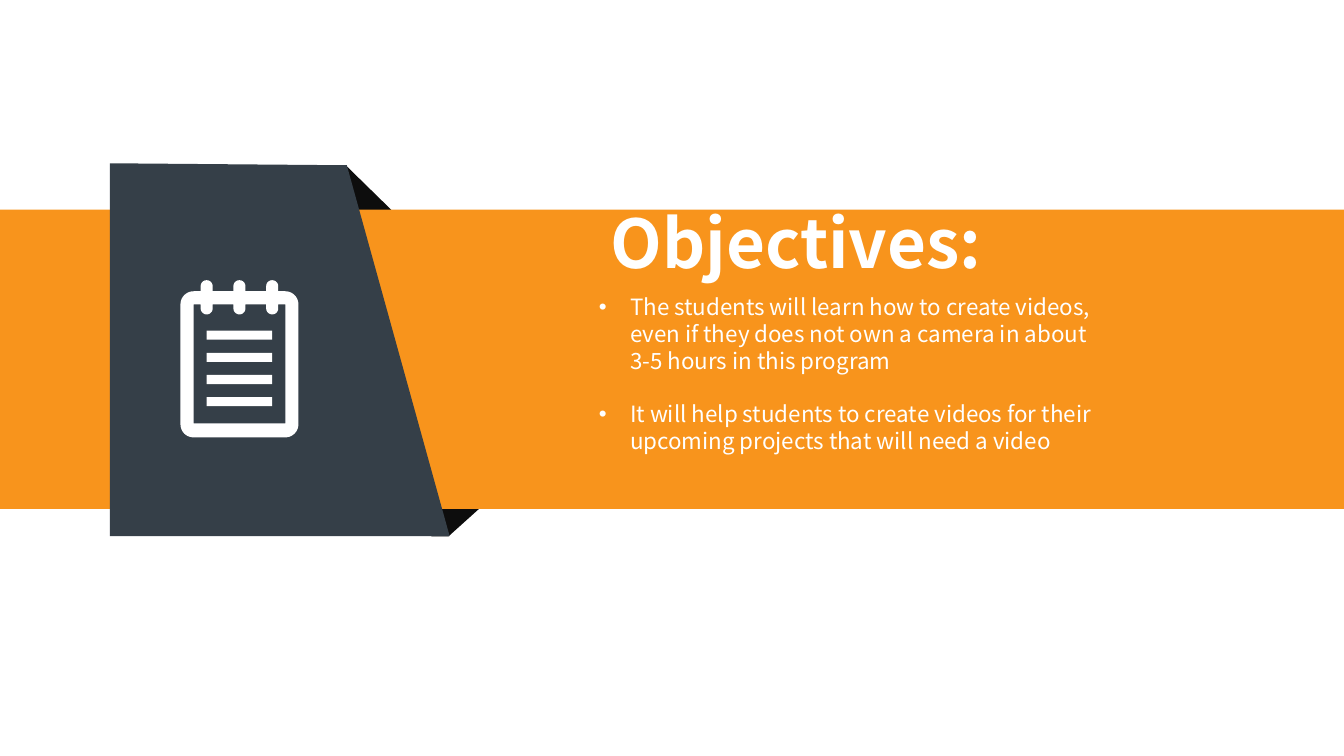
import math

import pptx
import pptx.dml.color
import pptx.enum.shapes
import pptx.enum.text
import pptx.util

Inches = pptx.util.Inches
Pt = pptx.util.Pt
RGBColor = pptx.dml.color.RGBColor
SHAPE = pptx.enum.shapes.MSO_SHAPE

ORANGE = RGBColor(0xF8, 0x94, 0x1C)
SLATE = RGBColor(0x35, 0x3F, 0x48)
BLACK = RGBColor(0x0D, 0x0D, 0x0D)
WHITE = RGBColor(0xFF, 0xFF, 0xFF)
FONT = "Noto Sans CJK SC"
TITLE_FORMAT = {"name": FONT, "size": Pt(48), "bold": True}
BODY_FORMAT = {"name": FONT, "size": Pt(16), "bold": False}
OBJECTIVES = [
    "The students will learn how to create videos, even if they does not own "
    "a camera in about 3-5 hours in this program",
    "It will help students to create videos for their upcoming projects that "
    "will need a video",
]


def paint(shape, color):
    shape.shadow.inherit = False
    shape.fill.solid()
    shape.fill.fore_color.rgb = color
    shape.line.fill.background()


def add_block(shapes, kind, left, top, width, height, color):
    box = [Inches(value) for value in (left, top, width, height)]
    paint(shapes.add_shape(kind, *box), color)


def add_outline(shapes, left, top, contours, color):
    """Draw closed contours, given relative to left and top, as one shape."""
    contours = [[(Inches(left + x), Inches(top + y)) for x, y in points]
                for points in contours]
    builder = shapes.build_freeform(*contours[0][0])
    for number, points in enumerate(contours):
        if number:
            builder.move_to(*points[0])
        builder.add_line_segments(points[1:], close=True)
    paint(builder.convert_to_shape(), color)


def arc(x, y, radius, start, end, steps=10):
    """Points on a circle; angles in degrees, clockwise from the right."""
    angles = [math.radians(start + (end - start) * i / steps) for i in range(steps + 1)]
    return [(x + radius * math.cos(a), y + radius * math.sin(a)) for a in angles]


def add_ribbon(slide, left, top, width, height):
    shapes = slide.shapes
    # Folds behind the band
    fold = [(0.02, -0.02), (0.47, 0), (0.17, 0.27), (0, 0.27)]
    add_outline(shapes, left + 4.28, top + height, [fold], BLACK)
    add_block(shapes, SHAPE.RIGHT_TRIANGLE, left + 3.43, top - 0.44, 0.46, 0.45, BLACK)
    # Band and slanted panel
    add_block(shapes, SHAPE.RECTANGLE, left, top, width, height, ORANGE)
    panel = [(0, 0), (2.35, 0.02), (3.37, 3.7), (0, 3.7)]
    add_outline(shapes, left + 1.09, top - 0.46, [panel], SLATE)


def add_notepad(slide, left, top, width, height):
    shapes = slide.shapes.add_group_shape().shapes
    # Pad with three rings along its top edge
    radius, border, page_top, ring = 0.13, 0.13, 0.11, 0.06
    ring_centers = [width / 2 + offset for offset in (-0.325, 0, 0.325)]
    outside = arc(radius, page_top + radius, radius, 180, 270)
    inside = [(border, page_top + border)]
    for center in ring_centers:
        outside += [(center - ring, page_top), *arc(center, ring, ring, 180, 360),
                    (center + ring, page_top)]
        inside += [(center - ring, page_top + border),
                   *arc(center, 0.28, ring, 180, 0),
                   (center + ring, page_top + border)]
    outside += arc(width - radius, page_top + radius, radius, 270, 360)
    outside += arc(width - radius, height - radius, radius, 0, 90)
    outside += arc(radius, height - radius, radius, 90, 180)
    inside += [(width - border, page_top + border),
               (width - border, height - border - 0.01),
               (border, height - border - 0.01)]
    add_outline(shapes, left, top, [outside, inside], WHITE)
    # Written lines
    for row in range(4):
        add_block(shapes, SHAPE.RECTANGLE, left + 0.26, top + 0.5 + 0.22 * row,
                  0.65, 0.09, WHITE)


def fill_placeholder(slide, placeholder, box, texts, format_values):
    slide.shapes.element.append(placeholder.element)  # in front of the band
    for name, value in zip(("left", "top", "width", "height"), box):
        setattr(placeholder, name, Inches(value))
    frame = placeholder.text_frame
    frame.text = "\n".join(texts)
    frame_values = {
        "word_wrap": True,
        "auto_size": pptx.enum.text.MSO_AUTO_SIZE.NONE,
        "vertical_anchor": pptx.enum.text.MSO_ANCHOR.TOP,
    }
    for name, value in frame_values.items():
        setattr(frame, name, value)
    for paragraph in frame.paragraphs:
        paragraph.alignment = pptx.enum.text.PP_ALIGN.LEFT
        paragraph.space_before = Pt(0)
        for name, value in format_values.items():
            setattr(paragraph.runs[0].font, name, value)
        paragraph.runs[0].font.color.rgb = WHITE
    return frame.paragraphs


def add_objectives(slide, left, top, width, height):
    title, body = slide.placeholders
    fill_placeholder(slide, title, (left + 0.12, top, width, 0.91),
                     ["Objectives:"], TITLE_FORMAT)
    paragraphs = fill_placeholder(slide, body, (left, top + 0.91, width, height - 0.91),
                                  OBJECTIVES, BODY_FORMAT)
    # Hanging bullets, one line apart
    for paragraph in paragraphs:
        properties = paragraph._p.get_or_add_pPr()
        properties.set("marL", str(Inches(0.31)))
        properties.set("indent", str(-Inches(0.31)))
    paragraphs[1].space_before = Pt(19)


def main():
    presentation = pptx.Presentation()
    presentation.slide_width = Inches(13.33)
    presentation.slide_height = Inches(7.5)
    slide = presentation.slides.add_slide(presentation.slide_layouts[1])
    add_ribbon(slide, 0, 2.08, 13.33, 2.97)
    add_objectives(slide, 5.84, 1.95, 5.25, 3.16)
    add_notepad(slide, 1.79, 2.78, 1.17, 1.56)
    presentation.save("out.pptx")


if __name__ == "__main__":
    main()
